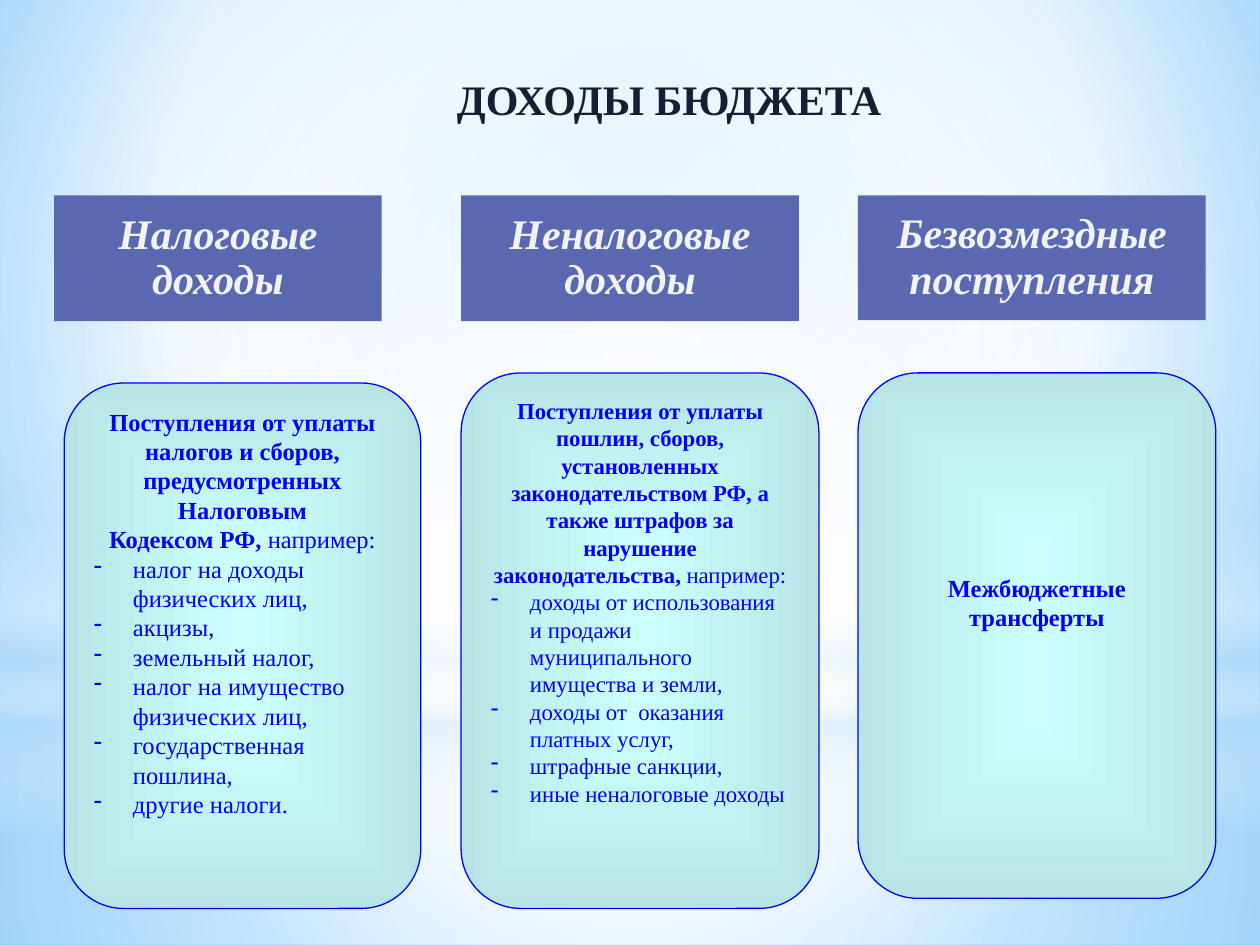
from lxml.etree import SubElement
from pptx import Presentation
from pptx.dml.color import RGBColor
from pptx.enum.shapes import MSO_SHAPE
from pptx.enum.text import MSO_ANCHOR, PP_ALIGN
from pptx.oxml.ns import qn
from pptx.util import Inches, Pt

FONT = "Times New Roman"
COLORS = {
    "title": "191D34", "header": "5968B0", "header_text": "F2F2F2",
    "card_text": "0000FF", "card_center": "CCFFFF", "card_edge": "B7E5E5",
    "sky": "9ED5FF", "deep_sky": "5BB9FF", "haze": "B4DCFA", "white": "FFFFFF",
}
CENTER = (50, 50, 50, 50)
HEADER_TOP = 1.55
COLUMNS = [
    {
        "header": "Налоговые доходы", "header_box": (0.43, 2.6, 1),
        "card_box": (0.51, 3.04, 2.83, 4.17), "size": 14, "top_inset": 0.05,
        "intro": ["Поступления от уплаты", "налогов и сборов,",
                  "предусмотренных Налоговым", "Кодексом РФ, "],
        "items": ["налог на доходы физических лиц,", "акцизы,", "земельный налог,",
                  "налог на имущество физических лиц,", "государственная пошлина,",
                  "другие налоги."],
    },
    {
        "header": "Неналоговые доходы", "header_box": (3.66, 2.68, 1),
        "card_box": (3.66, 2.96, 2.84, 4.25), "size": 13, "top_inset": 0.05,
        "intro": ["Поступления от уплаты пошлин, сборов, установленных "
                  "законодательством РФ, а также штрафов за нарушение законодательства, "],
        "items": ["доходы от использования и продажи муниципального имущества и земли,",
                  "доходы от  оказания платных услуг,", "штрафные санкции,",
                  "иные неналоговые доходы"],
    },
    {
        "header": "Безвозмездные поступления", "header_box": (6.81, 2.76, 0.99),
        "card_box": (6.81, 2.96, 2.84, 4.17), "size": 14, "top_inset": 1.45,
        "intro": ["Межбюджетные трансферты"], "items": [],
    },
]


def color(name):
    return RGBColor.from_string(COLORS[name])


def set_gradient(fill, properties, stops, focus=None, path="circle"):
    fill.gradient()
    gradient = properties.find(qn("a:gradFill"))
    for child in list(gradient):
        gradient.remove(child)
    stop_list = SubElement(gradient, qn("a:gsLst"))
    for position, name, alpha in stops:
        stop = SubElement(stop_list, qn("a:gs"), pos=str(position * 1000))
        tone = SubElement(stop, qn("a:srgbClr"), val=COLORS[name])
        if alpha < 100:
            SubElement(tone, qn("a:alpha"), val=str(alpha * 1000))
    if focus is None:
        SubElement(gradient, qn("a:lin"), ang="5400000", scaled="0")
    else:
        path_element = SubElement(gradient, qn("a:path"), path=path)
        sides = {side: str(share * 1000) for side, share in zip("ltrb", focus)}
        SubElement(path_element, qn("a:fillToRect"), **sides)


def add_plain_shape(slide, kind, left, top, width, height):
    shape = slide.shapes.add_shape(
        kind, Inches(left), Inches(top), Inches(width), Inches(height))
    shape.shadow.inherit = False
    shape.line.fill.background()
    return shape


def style_font(paragraph, size, color_name, bold=None, italic=None):
    font = paragraph.font
    font.name, font.size, font.bold, font.italic = FONT, Pt(size), bold, italic
    font.color.rgb = color(color_name)


def add_backdrop(slide):
    fill = slide.background.fill
    fill.solid()
    properties = slide.element.find(".//" + qn("p:bgPr"))
    set_gradient(fill, properties, [(0, "sky", 100), (60, "white", 100),
                 (100, "deep_sky", 100)], (20, 10, 20, 60))
    layers = [
        (MSO_SHAPE.RECTANGLE, 5.58, 1.92, CENTER,
         [(0, "white", 91), (37, "white", 76), (100, "haze", 79)]),
        (MSO_SHAPE.RECTANGLE, 0, 5.58, CENTER,
         [(0, "white", 89), (48, "white", 62), (100, "haze", 79)]),
        (MSO_SHAPE.RECTANGLE, 4.12, 2.5, None,
         [(0, "white", 0), (29, "white", 30), (45, "haze", 40),
          (55, "white", 26), (65, "haze", 60), (100, "white", 0)]),
        (MSO_SHAPE.OVAL, 1.75, 5.58, CENTER, [(0, "white", 100), (56, "white", 0)]),
    ]
    for kind, top, height, focus, stops in layers:
        shape = add_plain_shape(slide, kind, 0, top, 10, height)
        set_gradient(shape.fill, shape.element.spPr, stops, focus)


def add_title(slide, text):
    title = slide.shapes.title
    title.left, title.top = Inches(1.69), Inches(0.53)
    title.width, title.height = Inches(7.24), Inches(0.51)
    title.text_frame.text = text
    paragraph = title.text_frame.paragraphs[0]
    paragraph.alignment = PP_ALIGN.CENTER
    style_font(paragraph, 24, "title", bold=True)
    slide.shapes.element.append(title.element)


def add_header(slide, text, left, width, height):
    shape = add_plain_shape(slide, MSO_SHAPE.RECTANGLE, left, HEADER_TOP, width, height)
    shape.fill.solid()
    shape.fill.fore_color.rgb = color("header")
    frame = shape.text_frame
    frame.margin_left = frame.margin_right = Inches(0.06)
    frame.margin_top = frame.margin_bottom = Inches(0.06)
    frame.text = text
    paragraph = frame.paragraphs[0]
    paragraph.alignment = PP_ALIGN.CENTER
    paragraph.line_spacing = 0.9
    style_font(paragraph, 24, "header_text", bold=True, italic=True)


def make_dash_item(paragraph):
    properties = paragraph._p.get_or_add_pPr()
    indent = Inches(0.31)
    properties.set("marL", str(indent))
    properties.set("indent", str(-indent))
    SubElement(properties, qn("a:buChar"), char="-")


def add_card(slide, column):
    shape = add_plain_shape(slide, MSO_SHAPE.ROUNDED_RECTANGLE, *column["card_box"])
    set_gradient(shape.fill, shape.element.spPr,
                 [(0, "card_center", 100), (100, "card_edge", 100)], CENTER, "rect")
    shape.line.color.rgb = color("card_text")
    shape.line.width = Pt(0.75)
    frame = shape.text_frame
    frame.vertical_anchor = MSO_ANCHOR.TOP
    frame.margin_top = Inches(column["top_inset"])
    intro, items = column["intro"], column["items"]
    frame.text = "\n".join(intro + items)
    for index, paragraph in enumerate(frame.paragraphs):
        is_intro = index < len(intro)
        paragraph.alignment = PP_ALIGN.CENTER if is_intro else PP_ALIGN.LEFT
        if not is_intro:
            make_dash_item(paragraph)
        style_font(paragraph, column["size"], "card_text", bold=is_intro)
    if items:
        example = frame.paragraphs[len(intro) - 1].add_run()
        example.text = "например:"
        example.font.bold = False


def main():
    presentation = Presentation()
    presentation.slide_width, presentation.slide_height = Inches(10), Inches(7.5)
    slide = presentation.slides.add_slide(presentation.slide_layouts[5])
    add_backdrop(slide)
    add_title(slide, "ДОХОДЫ БЮДЖЕТА")
    for column in COLUMNS:
        add_header(slide, column["header"], *column["header_box"])
    for column in COLUMNS:
        add_card(slide, column)
    presentation.save("out.pptx")


if __name__ == "__main__":
    main()
